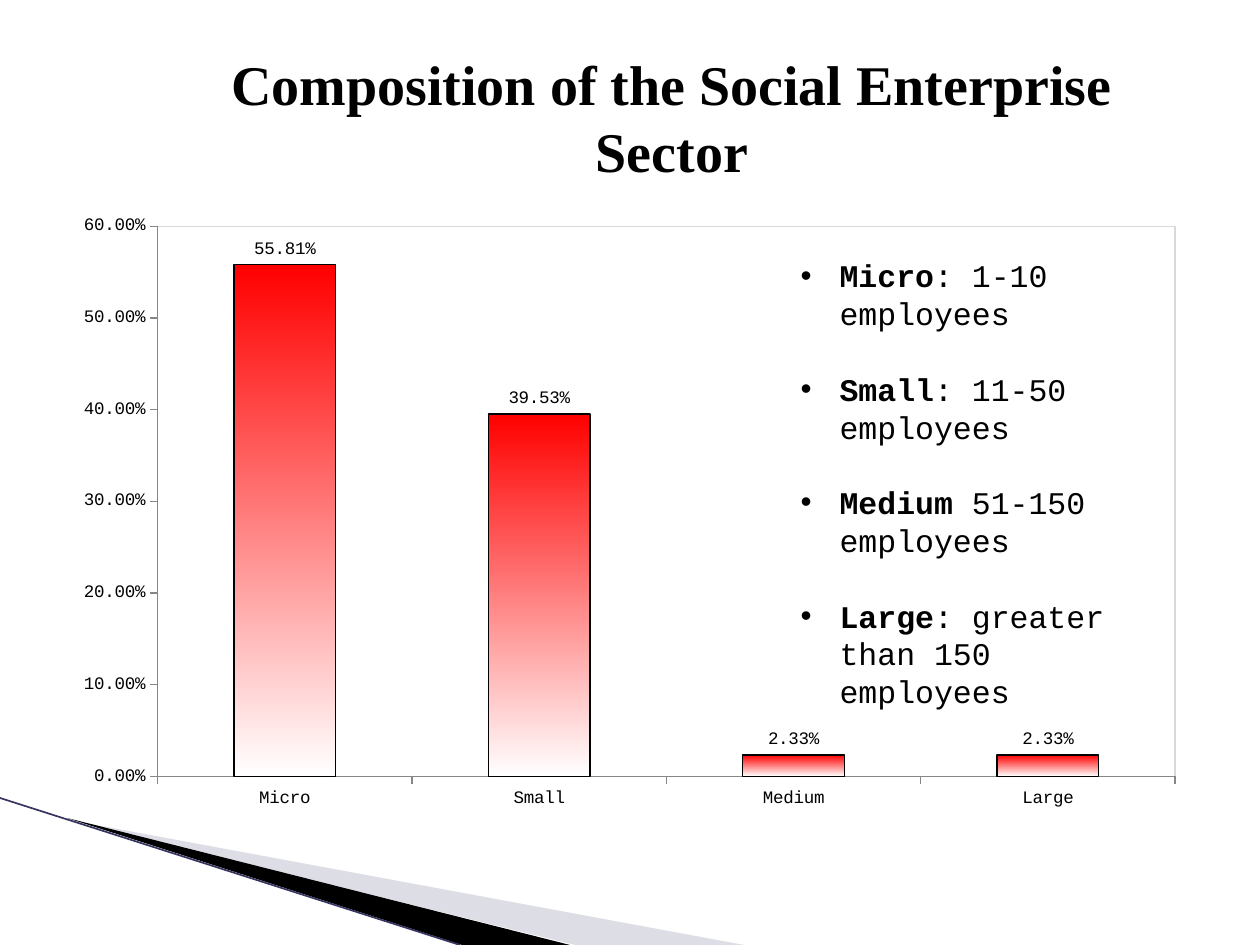
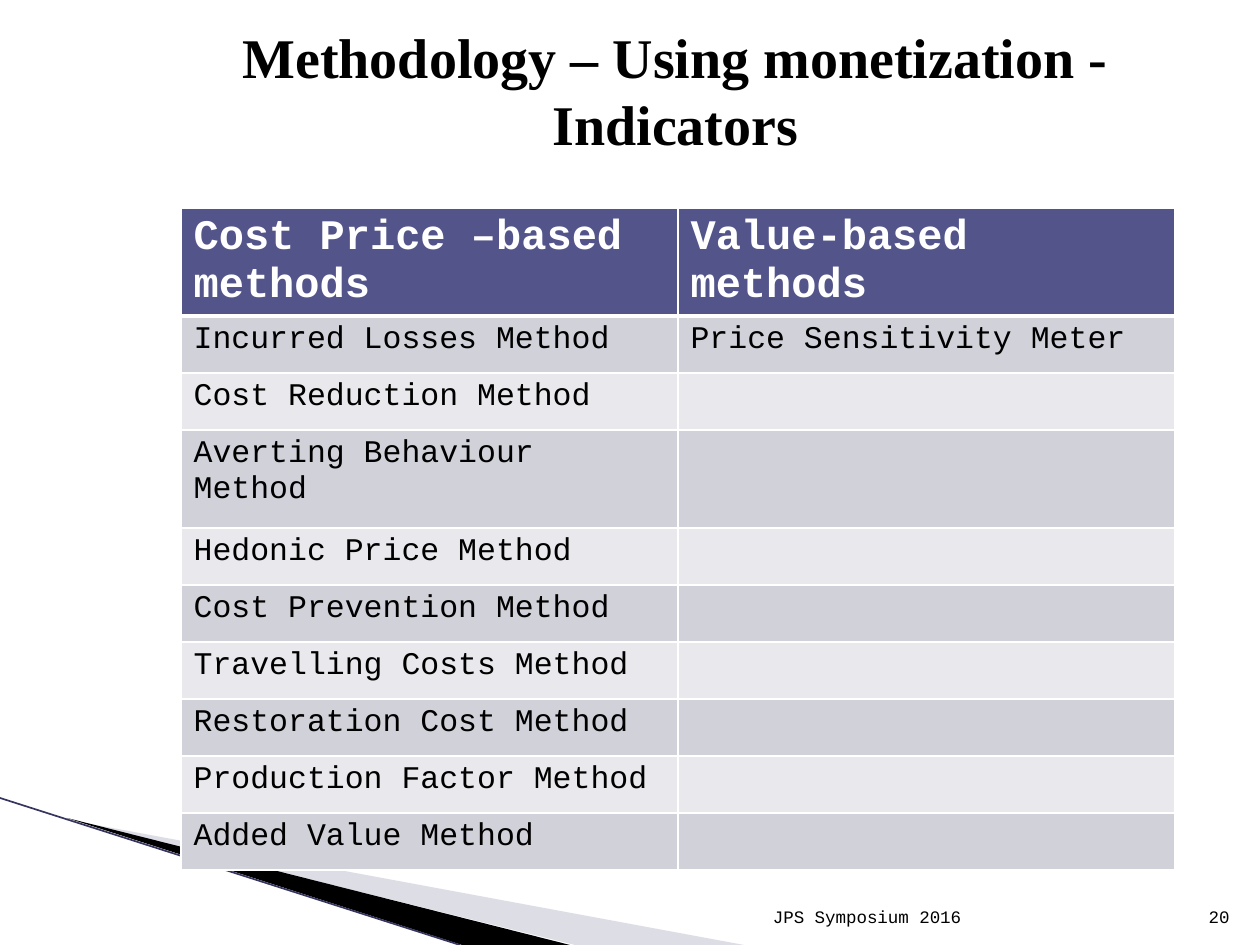
from dataclasses import dataclass

from lxml import etree
from pptx import Presentation
from pptx.chart.data import CategoryChartData
from pptx.dml.color import RGBColor
from pptx.enum.chart import XL_CHART_TYPE, XL_LABEL_POSITION, XL_TICK_MARK
from pptx.enum.shapes import MSO_CONNECTOR
from pptx.enum.text import MSO_ANCHOR, MSO_AUTO_SIZE, PP_ALIGN
from pptx.oxml.ns import qn
from pptx.util import Emu, Pt

COLUMN = XL_CHART_TYPE.COLUMN_CLUSTERED
OUTSIDE_END = XL_LABEL_POSITION.OUTSIDE_END
TICK_OUT, TICK_NONE = XL_TICK_MARK.OUTSIDE, XL_TICK_MARK.NONE
STRAIGHT = MSO_CONNECTOR.STRAIGHT
TOP, MIDDLE, BOTTOM = MSO_ANCHOR.TOP, MSO_ANCHOR.MIDDLE, MSO_ANCHOR.BOTTOM
NO_AUTOFIT = MSO_AUTO_SIZE.NONE
LEFT, CENTER, RIGHT = PP_ALIGN.LEFT, PP_ALIGN.CENTER, PP_ALIGN.RIGHT

EMU_PER_PX = 914400 / 126
SLIDE_WIDTH, SLIDE_HEIGHT = 1260, 945
TITLE_FONT, TEXT_FONT = "Times New Roman", "Courier New"
PERCENT = "0.00%"
COLORS = {
    "text": "000000",
    "white": "FFFFFF",
    "wedge": "AAAABF",
    "edge": "35355F",
    "header": "53548A",
    "odd row": "D1D1DA",
    "even row": "E9E9ED",
    "bar": "FF0000",
    "axis": "868686",
    "plot border": "D9D9D9",
}


@dataclass(frozen=True)
class Box:
    left: int
    top: int
    width: int
    height: int

    def emu(self) -> tuple:
        return px(self.left), px(self.top), px(self.width), px(self.height)


@dataclass(frozen=True)
class Wedge:
    points: tuple
    color: str
    alpha: int


@dataclass(frozen=True)
class FooterText:
    text: str
    box: Box
    align: PP_ALIGN


@dataclass(frozen=True)
class EnterpriseSize:
    name: str
    share: float
    definition: str


WEDGES = (
    Wedge(((69, 820), (744, 945), (575, 945)), "wedge", 40),
    Wedge(((67, 818), (570, 945), (462, 945)), "text", 100),
)
FOOTERS = (
    FooterText("JPS Symposium 2016", Box(705, 883, 324, 50), CENTER),
    FooterText("20", Box(1192, 883, 50, 50), RIGHT),
)
SIZES = (
    EnterpriseSize("Micro", 0.5581, ": 1-10 employees"),
    EnterpriseSize("Small", 0.3953, ": 11-50 employees"),
    EnterpriseSize("Medium", 0.0233, " 51-150 employees"),
    EnterpriseSize("Large", 0.0233, ": greater than 150 employees"),
)
METHODS = (
    ("Cost Price –based methods", "Value-based methods"),
    ("Incurred Losses Method", "Price Sensitivity Meter"),
    ("Cost Reduction Method", ""),
    ("Averting Behaviour Method", ""),
    ("Hedonic Price Method", ""),
    ("Cost Prevention Method", ""),
    ("Travelling Costs Method", ""),
    ("Restoration Cost Method", ""),
    ("Production Factor Method", ""),
    ("Added Value Method", ""),
)
ROW_HEIGHT = 57
TALL_ROWS = {0: 108, 3: 98}


# Shared helpers
def px(length: int) -> Emu:
    return Emu(round(length * EMU_PER_PX))


def rgb(name: str) -> RGBColor:
    return RGBColor.from_string(COLORS[name])


def set_font(font, size: int, name: str = TEXT_FONT, color: str = "text", bold: bool = False) -> None:
    font.name, font.size, font.bold = name, Pt(size), bold
    font.color.rgb = rgb(color)


def add_solid_fill(parent, color: str) -> None:
    fill = etree.SubElement(parent, qn("a:solidFill"))
    etree.SubElement(fill, qn("a:srgbClr"), val=COLORS[color])


def place(shape, box: Box) -> None:
    shape.left, shape.top, shape.width, shape.height = box.emu()


# Shared slide parts
def add_corner(slide) -> None:
    for wedge in WEDGES:
        builder = slide.shapes.build_freeform(*wedge.points[0], scale=EMU_PER_PX)
        builder.add_line_segments(wedge.points[1:], close=True)
        shape = builder.convert_to_shape()
        shape.shadow.inherit = False
        shape.line.fill.background()
        shape.fill.solid()
        shape.fill.fore_color.rgb = rgb(wedge.color)
        if wedge.alpha < 100:
            color = shape._element.spPr.find(qn("a:solidFill"))[0]
            etree.SubElement(color, qn("a:alpha"), val=str(wedge.alpha * 1000))
    edge = slide.shapes.add_connector(STRAIGHT, px(0), px(798), px(460), px(SLIDE_HEIGHT))
    edge.line.color.rgb = rgb("edge")
    edge.line.width = Pt(0.95)
    etree.SubElement(edge._element.spPr, qn("a:effectLst"))


def add_titled_slide(deck, layout: int, title: str, box: Box):
    slide = deck.slides.add_slide(deck.slide_layouts[layout])
    add_corner(slide)
    place(slide.shapes.title, box)
    frame = slide.shapes.title.text_frame
    frame.text = title
    frame.auto_size, frame.vertical_anchor = NO_AUTOFIT, MIDDLE
    para = frame.paragraphs[0]
    para.alignment = CENTER
    set_font(para.font, 32, TITLE_FONT, bold=True)
    return slide


def add_footer(slide, footer: FooterText) -> None:
    frame = slide.shapes.add_textbox(*footer.box.emu()).text_frame
    frame.word_wrap, frame.vertical_anchor = True, BOTTOM
    para = frame.paragraphs[0]
    para.text, para.alignment = footer.text, footer.align
    set_font(para.font, 10)


# Composition slide
def fill_size_list(body, box: Box) -> None:
    place(body, box)
    frame = body.text_frame
    frame.auto_size, frame.vertical_anchor = NO_AUTOFIT, TOP
    for index, size in enumerate(SIZES):
        para = frame.paragraphs[0] if index == 0 else frame.add_paragraph()
        para.line_spacing = 1.0
        para.space_before = Pt(21.6 if index else 0)
        properties = para._p.get_or_add_pPr()
        properties.set("marL", str(px(39)))
        properties.set("indent", str(-px(39)))
        etree.SubElement(properties, qn("a:buFont"), typeface="Arial")
        etree.SubElement(properties, qn("a:buChar"), char="•")
        set_font(para.font, 18)
        name = para.add_run()
        name.text, name.font.bold = size.name, True
        para.add_run().text = size.definition


def set_plot_area(chart) -> None:
    area = chart._chartSpace.chart.plotArea
    for old in area.findall(qn("c:layout")):
        area.remove(old)
    layout = etree.Element(qn("c:layout"))
    manual = etree.SubElement(layout, qn("c:manualLayout"))
    settings = {"layoutTarget": "inner", "xMode": "edge", "yMode": "edge",
                "x": "0.082", "y": "0.036", "w": "0.881", "h": "0.883"}
    for tag, value in settings.items():
        etree.SubElement(manual, qn(f"c:{tag}"), val=value)
    area.insert(0, layout)
    properties = etree.SubElement(area, qn("c:spPr"))
    etree.SubElement(properties, qn("a:noFill"))
    add_solid_fill(etree.SubElement(properties, qn("a:ln"), w=str(Pt(0.75))), "plot border")


def add_share_chart(slide, box: Box) -> None:
    data = CategoryChartData(number_format=PERCENT)
    data.categories = [size.name for size in SIZES]
    data.add_series("Series 1", [size.share for size in SIZES])
    chart = slide.shapes.add_chart(COLUMN, *box.emu(), data).chart
    chart.has_legend = chart.has_title = False
    set_font(chart.font, 10)

    for axis in (chart.category_axis, chart.value_axis):
        axis.has_major_gridlines = False
        axis.major_tick_mark, axis.minor_tick_mark = TICK_OUT, TICK_NONE
        axis.format.line.color.rgb = rgb("axis")
    values = chart.value_axis
    values.minimum_scale, values.maximum_scale, values.major_unit = 0, 0.6, 0.1
    values.tick_labels.number_format = PERCENT
    values.tick_labels.number_format_is_linked = False

    plot = chart.plots[0]
    plot.gap_width, plot.vary_by_categories = 150, False
    series = plot.series[0]
    series.invert_if_negative = False
    fill = series.format.fill
    fill.gradient()
    fill.gradient_angle = 270
    for stop, position, color in zip(fill.gradient_stops, (0, 1), ("bar", "white")):
        stop.position = position
        stop.color.rgb = rgb(color)
    series.format.line.color.rgb = rgb("text")
    series.format.line.width = Pt(0.75)
    labels = series.data_labels
    labels.show_value, labels.position = True, OUTSIDE_END
    labels.number_format, labels.number_format_is_linked = PERCENT, False
    set_font(labels.font, 10)
    set_plot_area(chart)


# Methodology slide
def set_borders(cell, top: int, bottom: int) -> None:
    properties = cell._tc.get_or_add_tcPr()
    widths = {"lnL": 1, "lnR": 1, "lnT": top, "lnB": bottom}
    for index, (tag, width) in enumerate(widths.items()):
        line = etree.Element(qn(f"a:{tag}"), w=str(Pt(width)))
        add_solid_fill(line, "white")
        properties.insert(index, line)


def add_method_table(slide, left: int, top: int, column_width: int) -> None:
    heights = [TALL_ROWS.get(index, ROW_HEIGHT) for index in range(len(METHODS))]
    box = Box(left, top, 2 * column_width, sum(heights))
    table = slide.shapes.add_table(len(METHODS), 2, *box.emu()).table
    for column in table.columns:
        column.width = px(column_width)
    for index, (texts, height) in enumerate(zip(METHODS, heights)):
        table.rows[index].height = px(height)
        is_header = index == 0
        fill = "header" if is_header else "odd row" if index % 2 else "even row"
        for cell, text in zip(table.rows[index].cells, texts):
            cell.fill.solid()
            cell.fill.fore_color.rgb = rgb(fill)
            cell.margin_bottom = px(0)
            set_borders(cell, top=3 if index == 1 else 1, bottom=3 if is_header else 1)
            para = cell.text_frame.paragraphs[0]
            para.text, para.alignment = text, LEFT
            set_font(para.font, 24 if is_header else 18,
                     color="white" if is_header else "text", bold=is_header)


def main() -> None:
    deck = Presentation()
    deck.slide_width, deck.slide_height = px(SLIDE_WIDTH), px(SLIDE_HEIGHT)

    composition = add_titled_slide(
        deck, 1, "Composition of the Social Enterprise Sector", Box(147, 38, 1050, 158))
    fill_size_list(composition.placeholders[1], Box(788, 250, 388, 468))
    add_share_chart(composition, Box(63, 204, 1155, 623))

    methodology = add_titled_slide(
        deck, 5, "Methodology – Using monetization - Indicators", Box(207, 23, 937, 134))
    for footer in FOOTERS:
        add_footer(methodology, footer)
    add_method_table(methodology, 181, 208, 497)

    deck.save("out.pptx")


if __name__ == "__main__":
    main()
